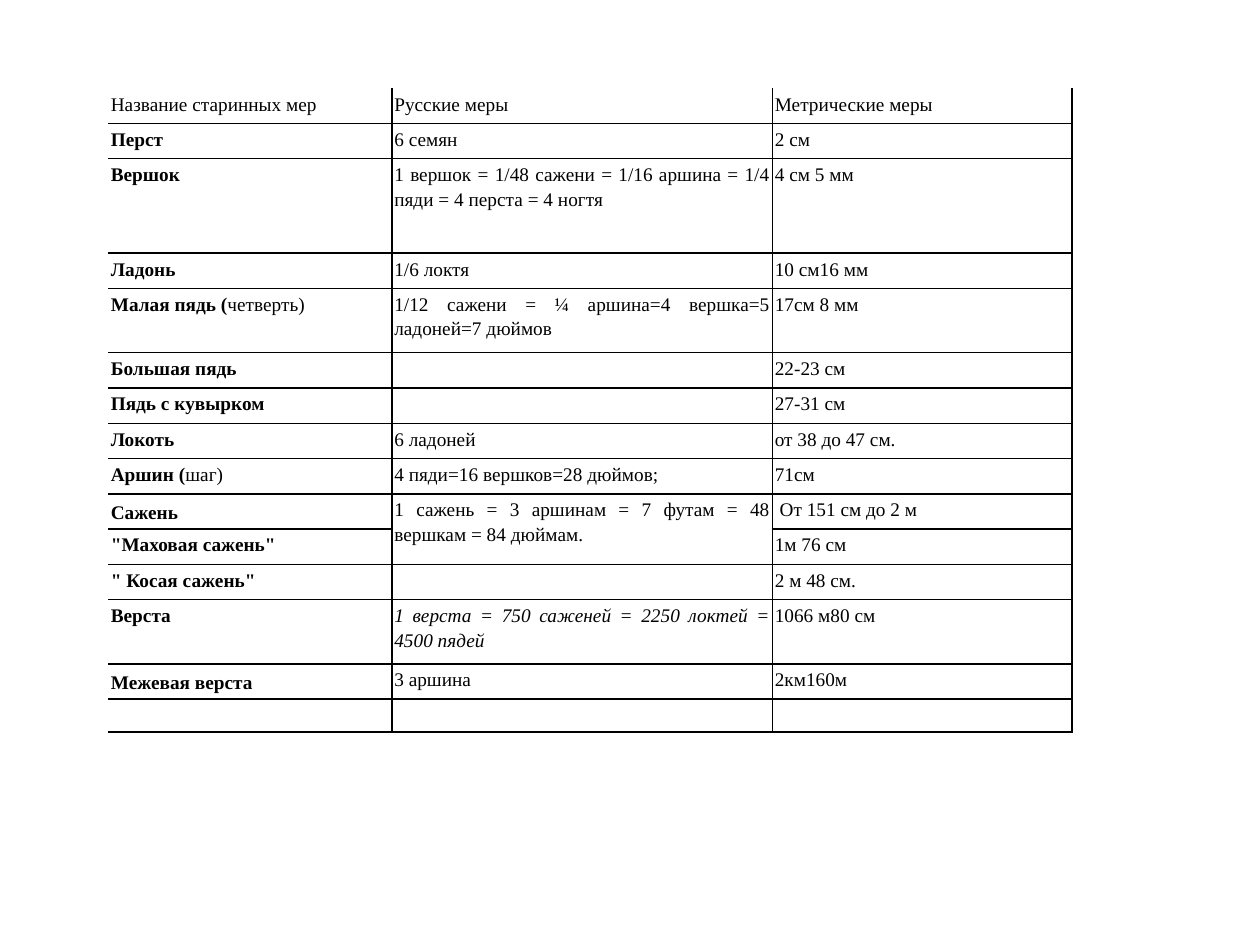
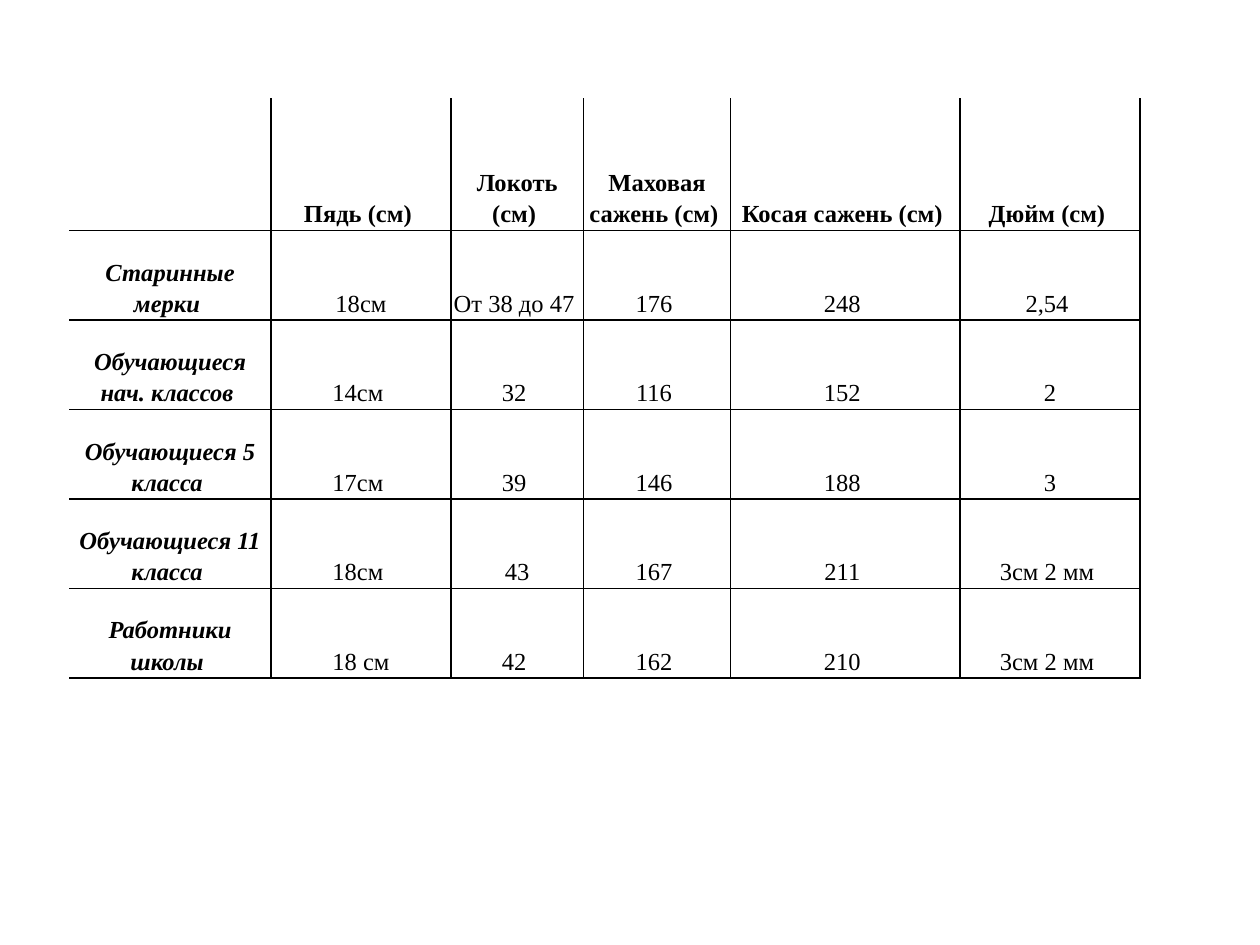
"""Two slides of tables: old Russian measures, and the same measures taken at school."""
from lxml import etree
from pptx import Presentation
from pptx.dml.color import RGBColor
from pptx.enum.text import MSO_ANCHOR, PP_ALIGN
from pptx.oxml.ns import qn
from pptx.util import Inches, Pt

TOP, MIDDLE, BOTTOM = MSO_ANCHOR.TOP, MSO_ANCHOR.MIDDLE, MSO_ANCHOR.BOTTOM
JUSTIFY, CENTER = PP_ALIGN.JUSTIFY, PP_ALIGN.CENTER

COLORS = {"text": "000000", "rule": "000000"}
FONT = "Times New Roman"
INSET = Inches(0.02)
RULE_WIDTH = Pt(1)

OLD_MEASURES = {
    "at": (0.86, 0.7),
    "columns": [2.25, 3.02, 2.38],
    "heights": [0.28, 0.28, 0.75, 0.28, 0.51] + [0.28] * 7 + [0.51, 0.28, 0.26],
    "size": 11,
    "align": JUSTIFY,
    "anchor": TOP,
    "middle_cells": {(9, 0), (13, 0)},
    "header_style": "",
    "name_style": "b",
    "merged": [((9, 1), (10, 1))],
    "rows": [
        ("Название старинных мер ", "Русские меры ", "Метрические меры "),
        ("Перст ", "6 семян ", "2 см "),
        ("Вершок ", "1 вершок = 1/48 сажени = 1/16 аршина = 1/4 пяди = 4 перста = 4 ногтя ",
         "4 см 5 мм "),
        ("Ладонь ", "1/6 локтя ", "10 см16 мм "),
        ([("Малая пядь (", "b"), ("четверть) ", "")],
         "1/12 сажени = ¼ аршина=4 вершка=5 ладоней=7 дюймов", "17см 8 мм "),
        ("Большая пядь ", "", "22-23 см "),
        ("Пядь с кувырком ", "", "27-31 см"),
        ("Локоть ", "6 ладоней ", "от 38 до 47 см. "),
        ([("Аршин (", "b"), ("шаг) ", "")], "4 пяди=16 вершков=28 дюймов; ", "71см "),
        ("Сажень ", "1 сажень = 3 аршинам = 7 футам = 48 вершкам = 84 дюймам.",
         " От 151 см до 2 м "),
        ('"Маховая сажень" ', "", "1м 76 см "),
        ('" Косая сажень" ', "", "2 м 48 см. "),
        ("Верста ", [("1 верста = 750 саженей = 2250 локтей = 4500 пядей ", "i")],
         "1066 м80 см "),
        ("Межевая верста ", "3 аршина ", "2км160м "),
        ("", "", ""),
    ],
}

SCHOOL_MEASURES = {
    "at": (0.55, 0.78),
    "columns": [1.6, 1.43, 1.05, 1.17, 1.82, 1.43],
    "heights": [1.05] + [0.71] * 5,
    "size": 14,
    "align": CENTER,
    "anchor": BOTTOM,
    "middle_cells": set(),
    "header_style": "b",
    "name_style": "bi",
    "merged": [],
    "rows": [
        ("", "Пядь (см) ", "Локоть (см) ", "Маховая сажень (см) ", "Косая сажень (см) ",
         "Дюйм (см) "),
        ("Старинные мерки ", "18см", "От 38 до 47 ", "176 ", "248 ", "2,54 "),
        ("Обучающиеся нач. классов ", "14см ", "32 ", "116 ", "152 ", "2"),
        ("Обучающиеся 5 класса ", "17см ", "39 ", "146 ", "188 ", "3"),
        ("Обучающиеся 11 класса ", "18см ", "43", "167 ", "211 ", "3см 2 мм "),
        ("Работники школы ", "18 см", "42 ", "162 ", "210 ", "3см 2 мм "),
    ],
}


def draw_borders(cell, row, column):
    """Rule every side of a cell except the table's outer left and top."""
    properties = cell._tc.get_or_add_tcPr()
    visible = {"lnL": column > 0, "lnR": True, "lnT": row > 0, "lnB": True}
    for side, shown in visible.items():
        line = etree.SubElement(properties, qn(f"a:{side}"), w=str(RULE_WIDTH))
        if shown:
            fill = etree.SubElement(line, qn("a:solidFill"))
            etree.SubElement(fill, qn("a:srgbClr"), val=COLORS["rule"])
        else:
            etree.SubElement(line, qn("a:noFill"))


def write_cell(cell, content, style, measures):
    """Write a string in the given style, or a list of (text, style) runs."""
    paragraph = cell.text_frame.paragraphs[0]
    if not content:
        etree.SubElement(paragraph._p, qn("a:endParaRPr"), sz=str(measures["size"] * 100))
        return
    paragraph.alignment = measures["align"]
    paragraph.line_spacing = 1.15
    paragraph.space_after = Pt(10)
    runs = [(content, style)] if isinstance(content, str) else content
    for text, run_style in runs:
        run = paragraph.add_run()
        run.text = text
        run.font.name = FONT
        run.font.size = Pt(measures["size"])
        run.font.bold = "b" in run_style
        run.font.italic = "i" in run_style
        run.font.color.rgb = RGBColor.from_string(COLORS["text"])


def add_measures(slide, measures):
    """Add one table of measures to a slide."""
    rows, columns, heights = measures["rows"], measures["columns"], measures["heights"]
    left, top = measures["at"]
    table = slide.shapes.add_table(
        len(rows), len(columns), Inches(left), Inches(top),
        Inches(sum(columns)), Inches(sum(heights))).table
    table.first_row = table.horz_banding = False
    for column, width in zip(table.columns, columns):
        column.width = Inches(width)
    for row, height in zip(table.rows, heights):
        row.height = Inches(height)
    for r, contents in enumerate(rows):
        for c, content in enumerate(contents):
            cell = table.cell(r, c)
            cell.margin_left = cell.margin_right = INSET
            cell.margin_top = cell.margin_bottom = INSET
            middle = (r, c) in measures["middle_cells"]
            cell.vertical_anchor = MIDDLE if middle else measures["anchor"]
            draw_borders(cell, r, c)
            cell.fill.background()
            style = measures["header_style"] if r == 0 else measures["name_style"] if c == 0 else ""
            write_cell(cell, content, style, measures)
    for first, last in measures["merged"]:
        table.cell(*first).merge(table.cell(*last))


def main():
    """Build both slides and save the presentation."""
    presentation = Presentation()
    presentation.slide_width, presentation.slide_height = Inches(10), Inches(7.5)
    blank = presentation.slide_layouts[6]
    for measures in (OLD_MEASURES, SCHOOL_MEASURES):
        add_measures(presentation.slides.add_slide(blank), measures)
    presentation.save("out.pptx")


if __name__ == "__main__":
    main()
